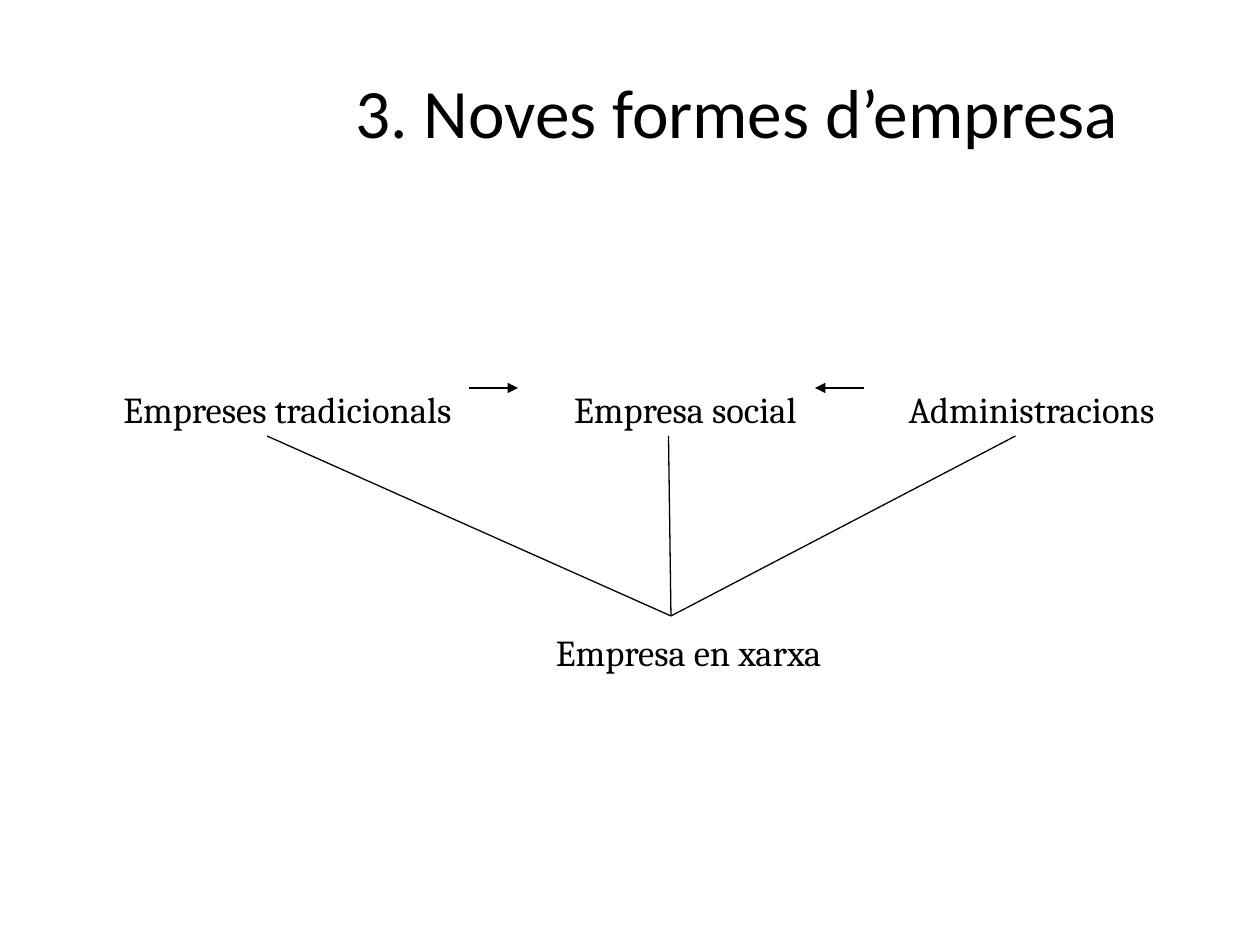
from dataclasses import dataclass

from lxml import etree
from pptx import Presentation
from pptx.dml.color import RGBColor
from pptx.enum.shapes import MSO_CONNECTOR
from pptx.enum.text import MSO_ANCHOR, MSO_AUTO_SIZE, PP_ALIGN
from pptx.oxml.ns import qn
from pptx.shapes.autoshape import Shape
from pptx.shapes.connector import Connector
from pptx.slide import Slide
from pptx.util import Emu, Pt

STRAIGHT = MSO_CONNECTOR.STRAIGHT
MIDDLE = MSO_ANCHOR.MIDDLE
GROW = MSO_AUTO_SIZE.SHAPE_TO_FIT_TEXT
RIGHT = PP_ALIGN.RIGHT
TOP_SIDE, BOTTOM_SIDE = 0, 2

PX_PER_INCH = 126
BLACK = "000000"
LABEL_HEIGHT = 63
FORMS_TOP = 373
NETWORK_TOP = 616
ARROW_Y = 388


@dataclass(frozen=True)
class Label:
    text: str
    left: int
    top: int
    width: int


@dataclass(frozen=True)
class Arrow:
    start_x: int
    end_x: int


FORMS = (
    Label("Empreses tradicionals", 70, FORMS_TOP, 394),
    Label("Empresa social", 528, FORMS_TOP, 281),
    Label("Administracions", 864, FORMS_TOP, 303),
)
NETWORK = Label("Empresa en xarxa", 508, NETWORK_TOP, 326)
ARROWS = (Arrow(469, 518), Arrow(864, 815))


def px(length: int) -> Emu:
    return Emu(round(length * 914400 / PX_PER_INCH))


def color(value: str) -> RGBColor:
    return RGBColor.from_string(value)


def add_text(slide: Slide, label: Label, height: int, font: str, size: float) -> Shape:
    box = slide.shapes.add_textbox(
        px(label.left), px(label.top), px(label.width), px(height))
    box.text_frame.text = label.text
    span = box.text_frame.paragraphs[0].runs[0]
    span.font.name = font
    span.font.size = Pt(size)
    span.font.color.rgb = color(BLACK)
    return box


def add_title(slide: Slide) -> None:
    title = Label("3. Noves formes d’empresa", 343, 55, 823)
    frame = add_text(slide, title, 121, "Calibri", 39.6).text_frame
    frame.word_wrap = True
    frame.vertical_anchor = MIDDLE
    frame.paragraphs[0].line_spacing = 0.9


def add_label(slide: Slide, label: Label) -> Shape:
    """Add a right-aligned label set as raised text."""
    box = add_text(slide, label, LABEL_HEIGHT, "Cambria", 36)
    frame = box.text_frame
    frame.word_wrap = False
    frame.auto_size = GROW
    para = frame.paragraphs[0]
    para.alignment = RIGHT
    para.runs[0].font._element.set("baseline", "30000")
    return box


def add_line(slide: Slide, start_x: int, start_y: int, end_x: int, end_y: int) -> Connector:
    line = slide.shapes.add_connector(
        STRAIGHT, px(start_x), px(start_y), px(end_x), px(end_y))
    line.line.color.rgb = color(BLACK)
    line.line.width = Pt(0.75)
    etree.SubElement(line._element.spPr, qn("a:effectLst"))
    return line


def join(slide: Slide, form: Shape, network: Shape) -> None:
    line = add_line(slide, 0, 0, 0, 0)
    line.begin_connect(form, BOTTOM_SIDE)
    line.end_connect(network, TOP_SIDE)


def add_arrow(slide: Slide, arrow: Arrow) -> None:
    line = add_line(slide, arrow.start_x, ARROW_Y, arrow.end_x, ARROW_Y)
    etree.SubElement(line.line._get_or_add_ln(), qn("a:tailEnd"), type="triangle")


def main() -> None:
    deck = Presentation()
    deck.slide_width, deck.slide_height = px(1260), px(945)
    slide = deck.slides.add_slide(deck.slide_layouts[6])
    add_title(slide)
    forms = [add_label(slide, label) for label in FORMS]
    network = add_label(slide, NETWORK)
    for form in forms:
        join(slide, form, network)
    for arrow in ARROWS:
        add_arrow(slide, arrow)
    deck.save("out.pptx")


if __name__ == "__main__":
    main()
